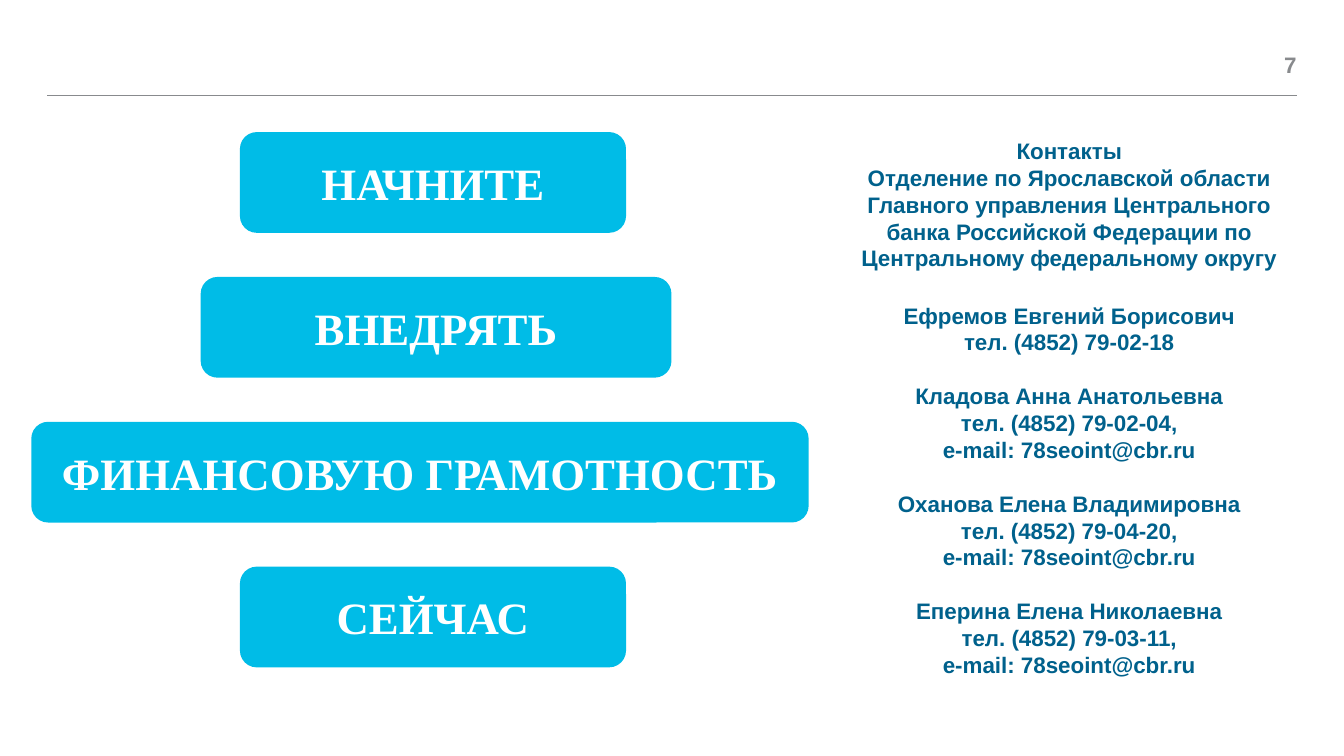
from dataclasses import dataclass

from lxml.etree import SubElement
from pptx import Presentation
from pptx.dml.color import RGBColor
from pptx.enum.shapes import MSO_CONNECTOR, MSO_SHAPE
from pptx.enum.text import MSO_ANCHOR, MSO_AUTO_SIZE, PP_ALIGN
from pptx.oxml.ns import qn
from pptx.slide import Slide
from pptx.text.text import TextFrame
from pptx.util import Inches, Length, Pt

WIDTH = Inches(13.33)
HEIGHT = Inches(7.5)
GRAY = "888A8D"
CYAN = "00BCE7"
NAVY = "00618C"
WHITE = "FFFFFF"
LINE_HEIGHT = 19.2
BANNER_TOP = 17.47
BANNER_STEP = 19.16
BANNER_HEIGHT = 13.33


@dataclass
class Banner:
    text: str
    left: float
    width: float


@dataclass
class ContactGroup:
    lines: list[str]
    gap: float = LINE_HEIGHT


BANNERS = [
    Banner("НАЧНИТЕ", 17.85, 28.73),
    Banner("ВНЕДРЯТЬ", 14.93, 35.03),
    Banner("ФИНАНСОВУЮ ГРАМОТНОСТЬ", 2.33, 57.84),
    Banner("СЕЙЧАС", 17.85, 28.73),
]

CONTACTS = [
    ContactGroup([
        "Контакты",
        "Отделение по Ярославской области Главного управления Центрального "
        "банка Российской Федерации по Центральному федеральному округу",
    ], 0),
    ContactGroup(["Ефремов Евгений Борисович", "тел. (4852) 79-02-18"], 21.6),
    ContactGroup(["Кладова Анна Анатольевна", "тел. (4852) 79-02-04,", "e-mail: 78seoint@cbr.ru"]),
    ContactGroup(["Оханова Елена Владимировна", "тел. (4852) 79-04-20,", "e-mail: 78seoint@cbr.ru"]),
    ContactGroup(["Еперина Елена Николаевна", "тел. (4852) 79-03-11,", "e-mail: 78seoint@cbr.ru"]),
]


def color(value: str) -> RGBColor:
    return RGBColor.from_string(value)


def across(percent: float) -> Length:
    return Length(round(WIDTH * percent / 100))


def down(percent: float) -> Length:
    return Length(round(HEIGHT * percent / 100))


def format_text(frame: TextFrame, font: str, size: float, ink: str, align: PP_ALIGN) -> None:
    frame.word_wrap = True
    for para in frame.paragraphs:
        para.alignment = align
        for span in para.runs:
            span.font.name = font
            span.font.size = Pt(size)
            span.font.bold = True
            span.font.color.rgb = color(ink)


def draw_header(page: Slide) -> None:
    rule = page.shapes.add_connector(
        MSO_CONNECTOR.STRAIGHT, across(3.53), down(12.67), across(96.47), down(12.67)
    )
    rule.line.color.rgb = color(GRAY)
    rule.line.width = Pt(0.5)
    SubElement(rule.element.spPr, qn("a:effectLst"))

    number = page.shapes.add_textbox(across(90.4), down(6.27), across(6.07), down(4.67))
    frame = number.text_frame
    frame.text = "7"
    frame.margin_left = frame.margin_right = frame.margin_top = frame.margin_bottom = 0
    frame.vertical_anchor = MSO_ANCHOR.MIDDLE
    format_text(frame, "Arial", 16, GRAY, PP_ALIGN.RIGHT)


def draw_contacts(page: Slide) -> None:
    body = page.placeholders[1]
    body.left, body.top = across(62.64), down(BANNER_TOP)
    body.width, body.height = across(33.83), down(77.6)
    frame = body.text_frame
    frame.auto_size = MSO_AUTO_SIZE.NONE
    frame.vertical_anchor = MSO_ANCHOR.TOP
    frame.text = "\n".join(line for group in CONTACTS for line in group.lines)
    gaps = [
        group.gap if index == 0 else 0
        for group in CONTACTS
        for index in range(len(group.lines))
    ]
    for para, gap in zip(frame.paragraphs, gaps):
        properties = para._p.get_or_add_pPr()
        properties.set("marL", "0")
        properties.set("indent", "0")
        SubElement(properties, qn("a:buNone"))
        para.space_before = Pt(gap)
        para.line_spacing = Pt(LINE_HEIGHT)
    format_text(frame, "Arial", 16, NAVY, PP_ALIGN.CENTER)


def draw_banner(page: Slide, banner: Banner, row: int) -> None:
    box = page.shapes.add_shape(
        MSO_SHAPE.ROUNDED_RECTANGLE,
        across(banner.left),
        down(BANNER_TOP + row * BANNER_STEP),
        across(banner.width),
        down(BANNER_HEIGHT),
    )
    box.shadow.inherit = False
    box.fill.solid()
    box.fill.fore_color.rgb = color(CYAN)
    box.line.fill.background()
    box.text_frame.text = banner.text
    box.text_frame.vertical_anchor = MSO_ANCHOR.MIDDLE
    format_text(box.text_frame, "Times New Roman", 32, WHITE, PP_ALIGN.CENTER)


def main() -> None:
    deck = Presentation()
    deck.slide_width, deck.slide_height = WIDTH, HEIGHT
    page = deck.slides.add_slide(deck.slide_layouts[1])
    title = page.shapes.title.element
    title.getparent().remove(title)
    draw_header(page)
    draw_contacts(page)
    for row, banner in enumerate(BANNERS):
        draw_banner(page, banner, row)
    deck.save("out.pptx")


if __name__ == "__main__":
    main()
